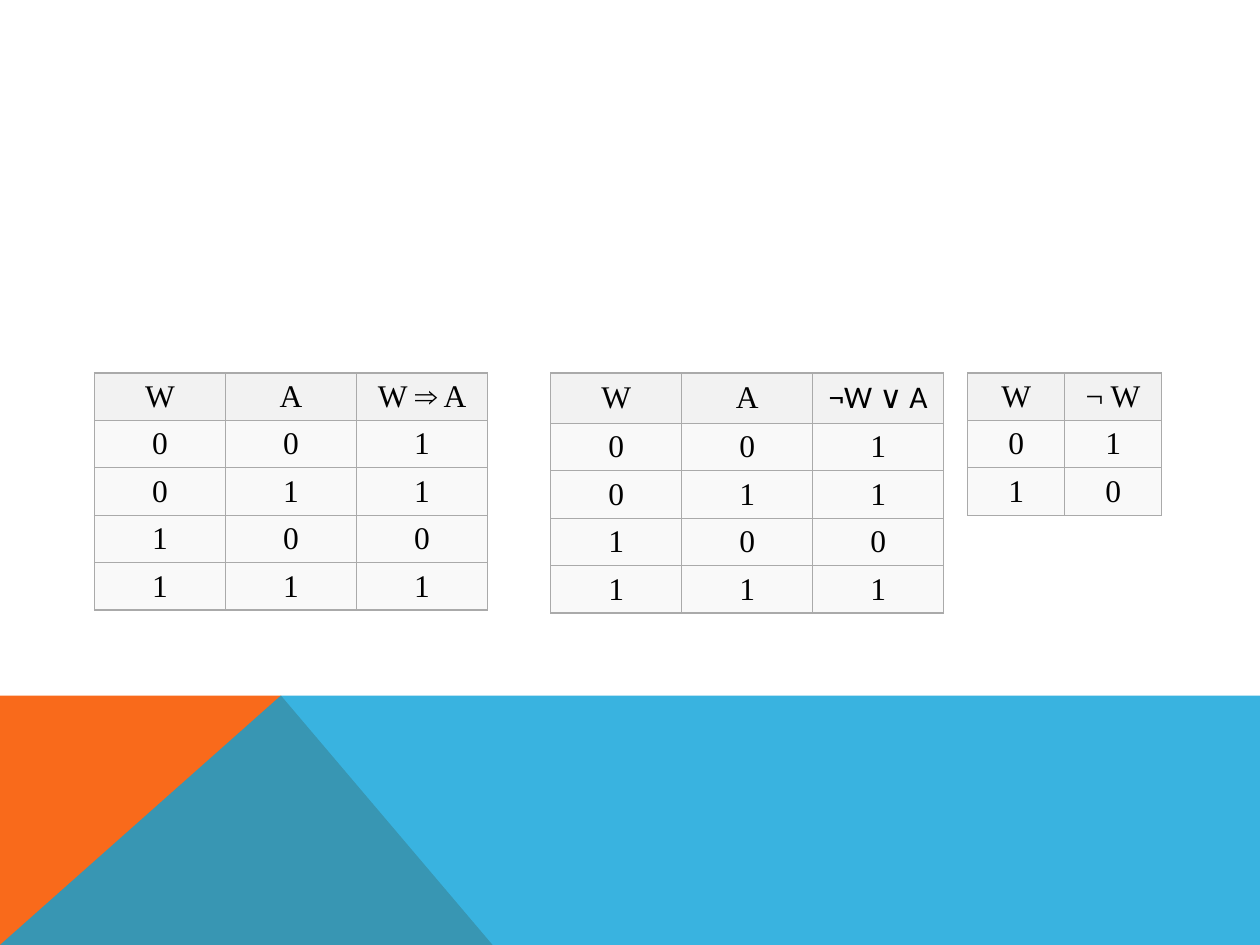
from dataclasses import dataclass

from lxml.etree import SubElement
from pptx import Presentation
from pptx.dml.color import RGBColor
from pptx.enum.text import MSO_ANCHOR, PP_ALIGN
from pptx.oxml.ns import qn
from pptx.util import Inches, Pt


@dataclass(frozen=True)
class Theme:
    orange: str = "F96A1B"
    blue: str = "08A1D9"
    header: str = "F2F2F2"
    body: str = "F9F9F9"
    border: str = "AAAAAA"
    text: str = "000000"
    font: str = "Times New Roman"
    formula_font: str = "Calibri"
    size: float = 18
    border_width: float = 0.75


class SlideBuilder:
    def __init__(self, s, theme):
        self.s = s
        self.theme = theme

    def polygon(self, points, color, opacity=100):
        points = [(Inches(x), Inches(y)) for x, y in points]
        builder = self.s.shapes.build_freeform(*points[0])
        builder.add_line_segments(points[1:], close=True)
        sp = builder.convert_to_shape()
        sp.shadow.inherit = False
        sp.fill.solid()
        sp.fill.fore_color.rgb = RGBColor.from_string(color)
        sp.line.fill.background()
        if opacity < 100:
            clr = sp.fill._xPr.find(qn("a:solidFill"))[0]
            SubElement(clr, qn("a:alpha")).set("val", str(opacity * 1000))

    def truth_table(self, left, top, col_width, rows, row_height, header_height,
                    formula_font=None):
        """Draw a table; formula_font applies to the last header cell."""
        n_rows, n_cols = len(rows), len(rows[0])
        height = header_height + row_height * (n_rows - 1)
        table = self.s.shapes.add_table(
            n_rows, n_cols, Inches(left), Inches(top),
            Inches(col_width * n_cols), Inches(height)).table
        for col in table.columns:
            col.width = Inches(col_width)
        for i, values in enumerate(rows):
            table.rows[i].height = Inches(header_height if i == 0 else row_height)
            for j, value in enumerate(values):
                is_formula = i == 0 and j == n_cols - 1
                font = formula_font if is_formula else None
                fill = self.theme.header if i == 0 else self.theme.body
                self.cell(table.cell(i, j), value, fill, font or self.theme.font)

    def cell(self, cell, value, fill, font):
        cell.margin_top = cell.margin_bottom = Inches(0.04)
        cell.margin_left = cell.margin_right = Inches(0.08)
        cell.vertical_anchor = MSO_ANCHOR.MIDDLE
        self.borders(cell)
        cell.fill.solid()
        cell.fill.fore_color.rgb = RGBColor.from_string(fill)
        p = cell.text_frame.paragraphs[0]
        p.text = value
        p.alignment = PP_ALIGN.CENTER
        r = p.runs[0]
        r.font.name = font
        r.font.size = Pt(self.theme.size)
        r.font.bold = False
        r.font.color.rgb = RGBColor.from_string(self.theme.text)

    def borders(self, cell):
        tc_pr = cell._tc.get_or_add_tcPr()
        for side in ("a:lnL", "a:lnR", "a:lnT", "a:lnB"):
            ln = SubElement(tc_pr, qn(side))
            ln.set("w", str(Pt(self.theme.border_width)))
            solid = SubElement(ln, qn("a:solidFill"))
            SubElement(solid, qn("a:srgbClr")).set("val", self.theme.border)


def main():
    prs = Presentation()
    prs.slide_width, prs.slide_height = Inches(10), Inches(7.5)
    theme = Theme()
    slide = SlideBuilder(prs.slides.add_slide(prs.slide_layouts[6]), theme)

    band_top, peak = 5.52, 2.23
    slide.polygon([(0, 7.5), (0, band_top), (peak, band_top), (3.91, 7.5)],
                  theme.orange)
    slide.polygon([(0, 7.5), (peak, band_top), (10, band_top), (10, 7.5)],
                  theme.blue, opacity=80)

    top, row_height = 2.96, 1.13 / 3
    implication = [(w, a, int(not w or a)) for w in (0, 1) for a in (0, 1)]
    negation = [(w, 1 - w) for w in (0, 1)]
    tables = [
        (0.75, 1.04, ("W", "A", "W ⇒ A"), implication, row_height, None),
        (4.37, 1.04, ("W", "A", "¬W ∨ A"), implication, 0.4, theme.formula_font),
        (7.68, 0.77, ("W", "¬ W"), negation, row_height, None),
    ]
    for left, col_width, header, values, header_height, formula_font in tables:
        rows = [header] + [tuple(map(str, row)) for row in values]
        slide.truth_table(left, top, col_width, rows, row_height,
                          header_height, formula_font)

    prs.save("out.pptx")


if __name__ == "__main__":
    main()
